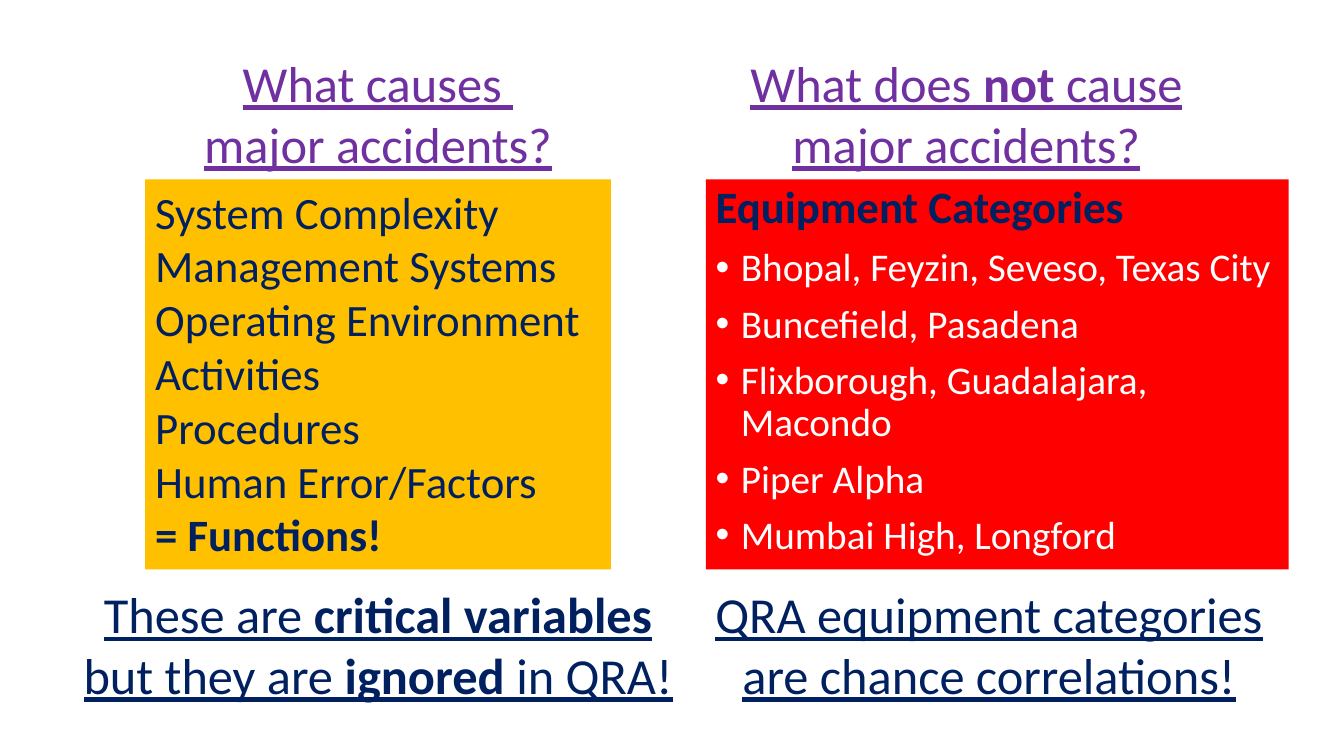
from lxml.etree import SubElement
from pptx import Presentation
from pptx.dml.color import RGBColor
from pptx.enum.shapes import MSO_SHAPE
from pptx.enum.text import MSO_ANCHOR, PP_ALIGN
from pptx.oxml.ns import qn
from pptx.util import Pt

PX = 9144  # 100 px to the inch
PURPLE = RGBColor(0x70, 0x30, 0xA0)
NAVY = RGBColor(0x00, 0x20, 0x60)
WHITE = RGBColor(0xFF, 0xFF, 0xFF)
RED = RGBColor(0xFF, 0x00, 0x00)
AMBER = RGBColor(0xFF, 0xC0, 0x00)

HEADING_TOP, PANEL_TOP, CONCLUSION_TOP = 47, 178, 574
PANEL_HEIGHT, CATEGORY_HEIGHT = 387, 63
RED_LEFT, RED_WIDTH = 700, 578

CAUSES = [
    "System Complexity", "Management Systems", "Operating Environment",
    "Activities", "Procedures", "Human Error/Factors",
]
ACCIDENTS = [
    "Bhopal, Feyzin, Seveso, Texas City", "Buncefield, Pasadena",
    "Flixborough, Guadalajara, Macondo", "Piper Alpha", "Mumbai High, Longford",
]


class AccidentSlide:
    font = "Calibri"
    caption_size = 36
    caption_height = 131

    def __init__(self, presentation):
        self.slide = presentation.slides.add_slide(presentation.slide_layouts[6])

    def add_run(self, paragraph, text, size, color, bold=False, underline=False):
        run = paragraph.add_run()
        run.text = text
        font = run.font
        font.name, font.size, font.bold = self.font, Pt(size), bold
        font.underline = underline
        font.color.rgb = color

    def caption(self, left, top, width, color, lines):
        """Add underlined centred lines, each a list of (text, bold) runs."""
        box = self.slide.shapes.add_textbox(
            left * PX, top * PX, width * PX, self.caption_height * PX)
        box.text_frame.word_wrap = False
        paragraph = box.text_frame.paragraphs[0]
        paragraph.alignment = PP_ALIGN.CENTER
        for index, line in enumerate(lines):
            if index:
                paragraph.add_line_break()
            for text, bold in line:
                self.add_run(paragraph, text, self.caption_size, color, bold, True)

    def panel(self, left, top, width, height, fill):
        """Add a filled rectangle and return its text frame."""
        shape = self.slide.shapes.add_shape(
            MSO_SHAPE.RECTANGLE, left * PX, top * PX, width * PX, height * PX)
        shape.shadow.inherit = False
        shape.fill.solid()
        shape.fill.fore_color.rgb = fill
        shape.line.fill.background()
        frame = shape.text_frame
        frame.word_wrap = True
        frame.vertical_anchor = MSO_ANCHOR.TOP
        return frame

    def add_items(self, frame, items, size, color, spaced=False, bulleted=False):
        """Fill a frame with one paragraph per (text, bold) item."""
        for index, (text, bold) in enumerate(items):
            paragraph = frame.add_paragraph() if index else frame.paragraphs[0]
            paragraph.alignment = PP_ALIGN.LEFT
            if spaced:
                paragraph.line_spacing = 0.9
                paragraph.space_before = Pt(10)
            if bulleted:
                self.add_bullet(paragraph)
            self.add_run(paragraph, text, size, color, bold)

    def add_bullet(self, paragraph):
        properties = paragraph._p.get_or_add_pPr()
        properties.set("marL", str(25 * PX))
        properties.set("indent", str(-25 * PX))
        SubElement(properties, qn("a:buFont")).set("typeface", "Arial")
        SubElement(properties, qn("a:buChar")).set("char", "•")


def main():
    presentation = Presentation()
    presentation.slide_width = 1333 * PX
    presentation.slide_height = 750 * PX
    page = AccidentSlide(presentation)

    page.caption(191, HEADING_TOP, 368, PURPLE, [
        [("What causes ", False)], [("major accidents?", False)]])
    page.caption(733, HEADING_TOP, 451, PURPLE, [
        [("What does ", False), ("not", True), (" cause", False)],
        [("major accidents?", False)]])
    page.caption(62, CONCLUSION_TOP, 626, NAVY, [
        [("These are ", False), ("critical variables", True)],
        [("but they are ", False), ("ignored", True), (" in QRA!", False)]])
    page.caption(697, CONCLUSION_TOP, 568, NAVY, [
        [("QRA equipment categories", False)],
        [("are chance correlations!", False)]])

    accidents = page.panel(RED_LEFT, PANEL_TOP + CATEGORY_HEIGHT, RED_WIDTH,
                           PANEL_HEIGHT - CATEGORY_HEIGHT, RED)
    page.add_items(accidents, [(text, False) for text in ACCIDENTS], 28, WHITE,
                   spaced=True, bulleted=True)
    category = page.panel(RED_LEFT, PANEL_TOP, RED_WIDTH, CATEGORY_HEIGHT, RED)
    page.add_items(category, [("Equipment Categories", True)], 32, NAVY, spaced=True)

    causes = page.panel(144, PANEL_TOP, 462, PANEL_HEIGHT, AMBER)
    page.add_items(causes, [(text, False) for text in CAUSES] + [("= Functions!", True)],
                   32, NAVY)

    presentation.save("out.pptx")


if __name__ == "__main__":
    main()
